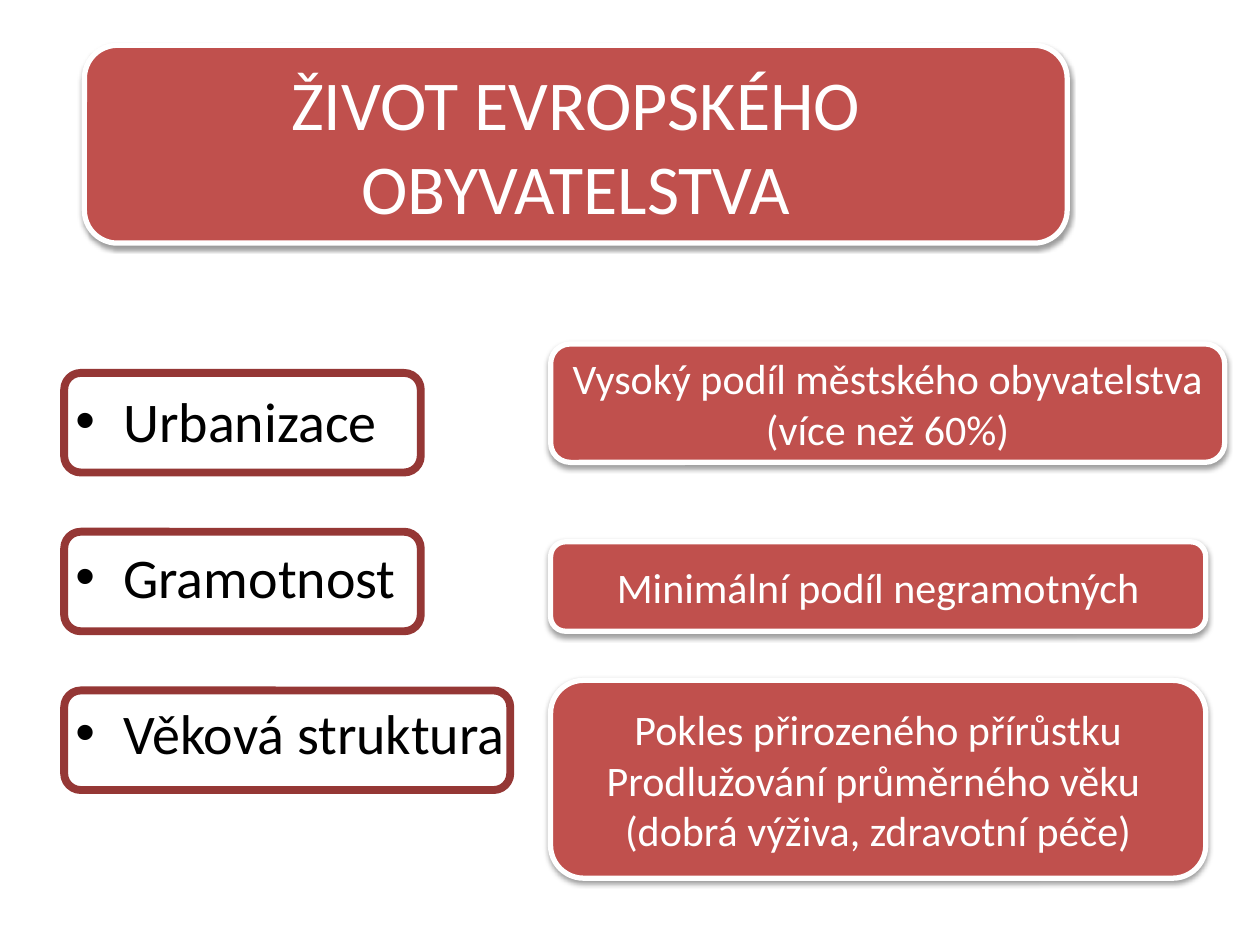
from lxml.etree import SubElement as Sub
from pptx import Presentation as Deck
from pptx.dml.color import RGBColor as Rgb
from pptx.enum.shapes import MSO_SHAPE as Form
from pptx.enum.text import MSO_ANCHOR as Anchor, PP_ALIGN as Align
from pptx.oxml.ns import qn
from pptx.util import Emu, Inches, Pt

HUE = {"red": "C0504D", "dark": "953735", "white": "FFFFFF", "black": "000000"}
CELL = Inches(0.1)
HEAD = "ŽIVOT EVROPSKÉHO OBYVATELSTVA"
TERMS = [("Urbanizace", 28.3), ("Gramotnost", 28.3), ("Věková struktura", 35.4)]
NOTES = [
    (0, 53.5, 9.4, ["Vysoký podíl městského obyvatelstva", "(více než 60%)"]),
    (15.7, 52, 7.1, ["Minimální podíl negramotných"]),
    (26.7, 52, 15.7, ["Pokles přirozeného přírůstku",
                      "Prodlužování průměrného věku ",
                      "(dobrá výživa, zdravotní péče)"]),
]


def grid(*cells):
    """Turn grid cells into lengths."""
    return [Emu(round(n * CELL)) for n in cells]


def style(font, size, hue):
    """Set the look of a font."""
    for key, val in {"name": "Calibri", "size": Pt(size)}.items():
        setattr(font, key, val)
    font.color.rgb = Rgb.from_string(HUE[hue])


def frame(slide, box, hue, width):
    """Add an unfilled rounded box with a coloured line."""
    shape = slide.shapes.add_shape(Form.ROUNDED_RECTANGLE, *grid(*box))
    shape.shadow.inherit = False
    shape.fill.background()
    shape.line.color.rgb = Rgb.from_string(HUE[hue])
    shape.line.width = Pt(width)
    return shape


def shade(shape):
    """Give a shape a soft shadow below it."""
    fx = shape._element.spPr.find(qn("a:effectLst"))
    drop = Sub(fx, qn("a:outerShdw"), blurRad=str(Pt(3.1)), dist=str(Pt(1.6)),
               dir="5400000", rotWithShape="0")
    tint = Sub(drop, qn("a:srgbClr"), val=HUE["black"])
    Sub(tint, qn("a:alpha"), val="38000")


def card(slide, box, lines, size):
    """Add a red card with centred lines of text."""
    shape = frame(slide, box, "white", 3)
    shape.fill.solid()
    shape.fill.fore_color.rgb = Rgb.from_string(HUE["red"])
    shade(shape)
    text = shape.text_frame
    for key, val in {"word_wrap": True, "vertical_anchor": Anchor.MIDDLE}.items():
        setattr(text, key, val)
    text.text = "\n".join(lines)
    for para in text.paragraphs:
        para.alignment = Align.CENTER
        style(para.font, size, "white")


def terms(slide, box):
    """Place the bullet list and a frame round each term."""
    left, top, wide, high = box
    text = slide.shapes.add_textbox(*grid(left - 0.1, top + 0.6, wide, high)).text_frame
    text.word_wrap = True
    text.text = "\n".join(term for term, _ in TERMS)
    for row, para in enumerate(text.paragraphs):
        props = para._p.get_or_add_pPr()
        props.set("marL", str(Inches(0.38)))
        props.set("indent", str(-Inches(0.38)))
        para.space_before = Pt(50.7 if row else 0)
        Sub(props, qn("a:buFont"), typeface="Arial")
        Sub(props, qn("a:buChar"), char="•")
        style(para.font, 32, "black")
    for row, (_, width) in enumerate(TERMS):
        frame(slide, (left, top + 12.6 * row, width, 7.9), "dark", 4.5)


def notes(slide, box):
    """Place the explaining cards down the box."""
    left, top = box
    for drop, wide, high, lines in NOTES:
        card(slide, (left, top + drop, wide, high), lines, 24)


def main():
    """Build and save the slide."""
    deck = Deck()
    deck.slide_width, deck.slide_height = grid(100, 75)
    slide = deck.slides.add_slide(deck.slide_layouts[6])
    card(slide, (6.7, 3.6, 78, 15.7), [HEAD], 40)
    terms(slide, (5.1, 29.6, 38, 33.1))
    notes(slide, (43.7, 27.3))
    deck.save("out.pptx")


if __name__ == "__main__":
    main()
